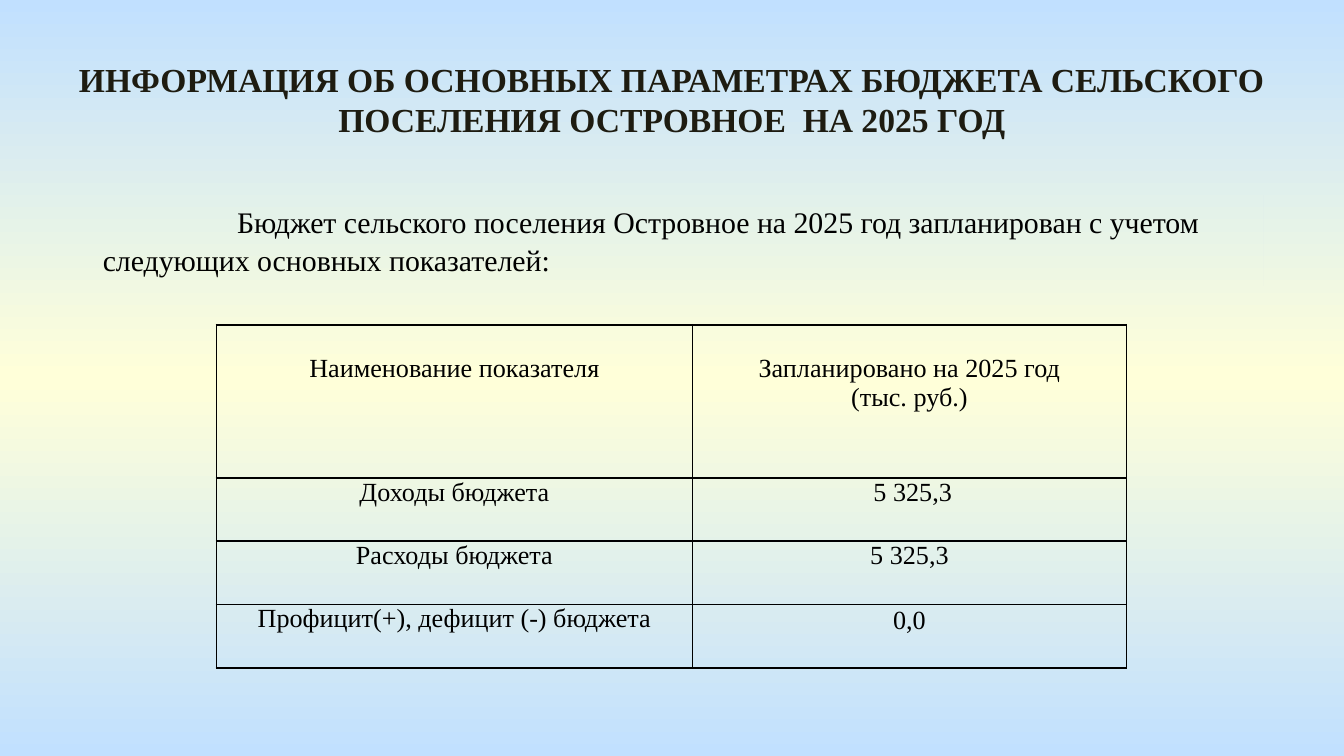
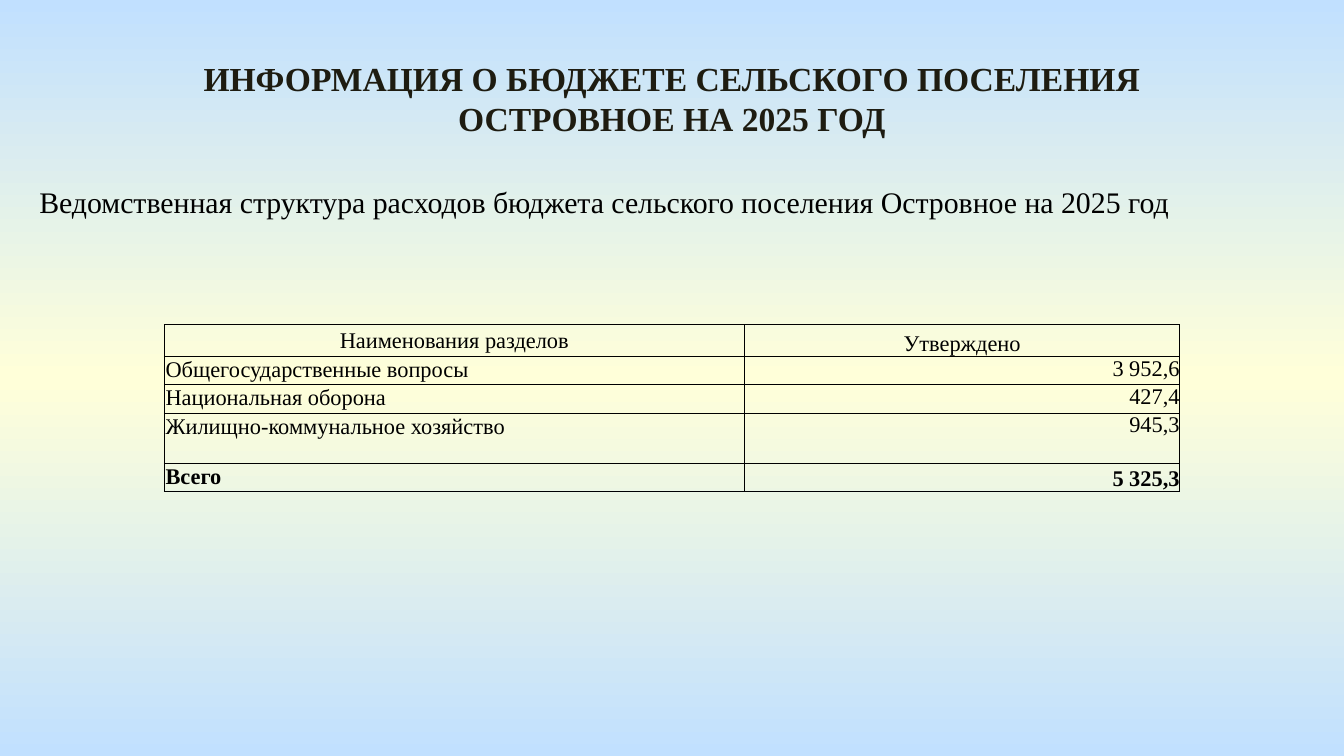
from copy import deepcopy

from lxml import etree
from pptx import Presentation
from pptx.dml.color import RGBColor
from pptx.enum import shapes, text
from pptx.oxml import ns
from pptx.util import Pt

BLUE = RGBColor(0xC1, 0xE0, 0xFF)
CREAM = RGBColor(0xFF, 0xFF, 0xD9)
DARK = RGBColor(0x1E, 0x1C, 0x11)
BLACK = RGBColor(0, 0, 0)
FACE = "Times New Roman"

LEFT = text.PP_ALIGN.LEFT
MID = text.PP_ALIGN.CENTER
RIGHT = text.PP_ALIGN.RIGHT
FULL = text.PP_ALIGN.JUSTIFY
TOP = text.MSO_ANCHOR.TOP
CENTRE = text.MSO_ANCHOR.MIDDLE
BASE = text.MSO_ANCHOR.BOTTOM

WIDE = (5, 0, 5, 0)
THIN = (0.72, 0.72, 0.72, 0)
NONE = (0, 0, 0, 0)


def apply(item, **props):
    for name, value in props.items():
        setattr(item, name, value)


def place(shape, left, top, width, height):
    apply(shape, left=Pt(left), top=Pt(top), width=Pt(width), height=Pt(height))


def write(frame, words, size, align=LEFT, color=BLACK, bold=False, pitch=None):
    frame.text = words
    for para in frame.paragraphs:
        apply(para, alignment=align, line_spacing=pitch)
        for run in para.runs:
            apply(run.font, name=FACE, size=Pt(size), bold=bold)
            run.font.color.rgb = color


def set_back(master):
    fill = master.background.fill
    fill.gradient()
    fill.gradient_angle = 270
    stops = master.element.find(".//" + ns.qn("a:gsLst"))
    stops.append(deepcopy(stops[-1]))
    for stop, spot, color in zip(fill.gradient_stops, (0, 0.5, 1), (BLUE, CREAM, BLUE)):
        stop.position = spot
        stop.color.rgb = color


def add_page(deck, words, box):
    slide = deck.slides.add_slide(deck.slide_layouts[5])
    title = slide.shapes.title
    place(title, *box)
    apply(title.text_frame, word_wrap=True, vertical_anchor=TOP,
          auto_size=text.MSO_AUTO_SIZE.NONE)
    write(title.text_frame, words, 18, MID, DARK, True, Pt(21.5))
    return slide


def add_intro(slide, words, box):
    panel = slide.shapes.add_shape(shapes.MSO_SHAPE.RECTANGLE, *map(Pt, box))
    panel.shadow.inherit = False
    panel.line.fill.background()
    panel.element.set("useBgFill", "1")
    frame = panel.text_frame
    apply(frame, word_wrap=True, vertical_anchor=TOP)
    write(frame, words, 16, pitch=Pt(20))
    frame.paragraphs[0]._p.get_or_add_pPr().set("indent", str(Pt(72)))


def add_note(slide, words, box):
    frame = slide.shapes.add_textbox(*map(Pt, box)).text_frame
    frame.word_wrap = True
    write(frame, words, 16, FULL)


def add_edges(cell, weight):
    props = cell._tc.get_or_add_tcPr()
    for spot, side in enumerate(("lnL", "lnR", "lnT", "lnB")):
        edge = etree.Element(ns.qn("a:" + side), w=str(Pt(weight)))
        fill = etree.SubElement(edge, ns.qn("a:solidFill"))
        etree.SubElement(fill, ns.qn("a:srgbClr"), val=str(BLACK))
        props.insert(spot, edge)


def set_cell(cell, words, size, weight, align=MID, pads=WIDE, anchor=TOP, bold=False):
    write(cell.text_frame, words, size, align, bold=bold)
    sides = ("margin_left", "margin_top", "margin_right", "margin_bottom")
    apply(cell, vertical_anchor=anchor, **dict(zip(sides, map(Pt, pads))))
    cell.fill.background()
    add_edges(cell, weight)


def add_grid(slide, spot, cols, rows, data, look, size, weight):
    box = (*spot, sum(cols), sum(rows))
    table = slide.shapes.add_table(len(rows), len(cols), *map(Pt, box)).table
    apply(table, first_row=False, horz_banding=False)
    for col, width in zip(table.columns, cols):
        col.width = Pt(width)
    for row, height in zip(table.rows, rows):
        row.height = Pt(height)
    for r, line in enumerate(data):
        for c, words in enumerate(line):
            set_cell(table.cell(r, c), words, size, weight, **look(r, c))


def plan_look(row, col):
    if row == 0:
        return {"pads": (5, 16, 5, 0)}
    return {"pads": THIN if (row, col) == (3, 1) else WIDE}


def cost_look(row, col):
    if row == 0:
        return {"pads": THIN, "anchor": BASE if col else CENTRE}
    last = row == 4
    if col:
        return {"align": RIGHT, "pads": NONE, "bold": last,
                "anchor": BASE if last else TOP}
    return {"align": LEFT, "pads": THIN, "bold": last}


def main():
    deck = Presentation()
    apply(deck, slide_width=Pt(720), slide_height=Pt(405))
    set_back(deck.slide_master)

    plan = add_page(
        deck, "ИНФОРМАЦИЯ ОБ ОСНОВНЫХ ПАРАМЕТРАХ БЮДЖЕТА СЕЛЬСКОГО "
        "ПОСЕЛЕНИЯ ОСТРОВНОЕ  НА 2025 ГОД", (25, 28, 670, 51))
    add_intro(
        plan, "Бюджет сельского поселения Островное на 2025 год запланирован "
        "с учетом следующих основных показателей:", (48, 105, 629, 48))
    add_grid(plan, (116, 174), (255, 232.5), (82, 34, 34, 34), (
        ("Наименование показателя", "Запланировано на 2025 год\n(тыс. руб.)"),
        ("Доходы бюджета", " 5 325,3"),
        ("Расходы бюджета", "5 325,3"),
        ("Профицит(+), дефицит (-) бюджета", "0,0"),
    ), plan_look, 14, 1)

    cost = add_page(
        deck, "ИНФОРМАЦИЯ О БЮДЖЕТЕ СЕЛЬСКОГО ПОСЕЛЕНИЯ ОСТРОВНОЕ НА 2025 ГОД",
        (81.5, 27.5, 557, 51))
    add_note(
        cost, "Ведомственная структура расходов бюджета сельского поселения "
        "Островное на 2025 год", (14, 95, 692, 46))
    add_grid(cost, (88, 174), (311, 233), (17, 15, 15, 27, 15), (
        ("Наименования разделов", "Утверждено"),
        ("Общегосударственные вопросы", "3 952,6"),
        ("Национальная оборона", "427,4"),
        ("Жилищно-коммунальное хозяйство", "945,3"),
        ("Всего", "5 325,3"),
    ), cost_look, 12, 0.5)

    deck.save("out.pptx")


if __name__ == "__main__":
    main()
